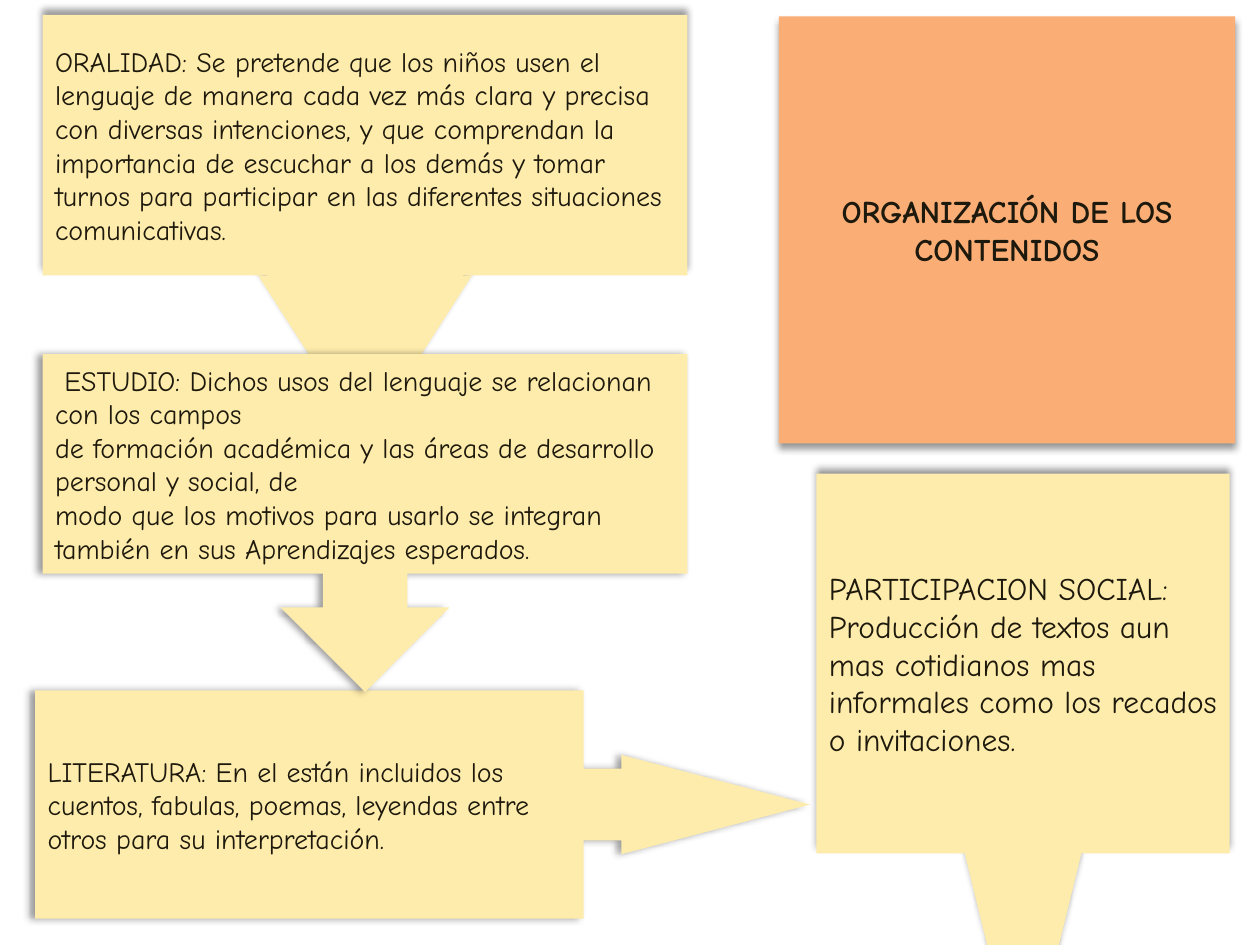
import dataclasses

import lxml.etree
import pptx
import pptx.dml.color
import pptx.enum.shapes
import pptx.enum.text
import pptx.oxml.ns
import pptx.util

SHAPES = pptx.enum.shapes.MSO_SHAPE
ALIGN = pptx.enum.text.PP_ALIGN
DOWN, LEFT, UP = 90, 180, 270  # shadow directions in degrees


@dataclasses.dataclass(frozen=True)
class Theme:
    font: str = "Comic Neue"
    ink: str = "1E190D"
    topic: str = "FAAE76"
    callout: str = "FEECAC"
    shadow: str = "000000"
    shadow_opacity: int = 40
    shadow_blur: int = 4
    shadow_distance: int = 3
    large: int = 18
    body: int = 16


def add_element(parent, tag, **attributes):
    element = lxml.etree.SubElement(parent, pptx.oxml.ns.qn(tag))
    for name, value in attributes.items():
        element.set(name, str(value))
    return element


def write_text(shape, text, *, font, size, color, bold=False, align=ALIGN.LEFT):
    """Fill the shape with one paragraph per line of text."""
    frame = shape.text_frame
    frame.word_wrap = True
    frame.auto_size = pptx.enum.text.MSO_AUTO_SIZE.NONE
    frame.vertical_anchor = pptx.enum.text.MSO_ANCHOR.MIDDLE
    frame.text = text
    for paragraph in frame.paragraphs:
        paragraph.alignment = align
        for run in paragraph.runs:
            run.font.name = font
            run.font.size = pptx.util.Pt(size)
            run.font.bold = bold
            run.font.color.rgb = pptx.dml.color.RGBColor.from_string(color)


class SlideBuilder:
    def __init__(self, slide, theme):
        self.slide = slide
        self.theme = theme

    def paint(self, shape, color, shadow_direction):
        theme = self.theme
        shape.fill.solid()
        shape.fill.fore_color.rgb = pptx.dml.color.RGBColor.from_string(color)
        shape.line.fill.background()
        shape.shadow.inherit = False
        effects = shape.element.spPr.find(pptx.oxml.ns.qn("a:effectLst"))
        shadow = add_element(
            effects, "a:outerShdw",
            blurRad=pptx.util.Pt(theme.shadow_blur),
            dist=pptx.util.Pt(theme.shadow_distance),
            dir=shadow_direction * 60000, rotWithShape=0)
        tint = add_element(shadow, "a:srgbClr", val=theme.shadow)
        add_element(tint, "a:alpha", val=theme.shadow_opacity * 1000)

    def title_circle(self, text, left, top, width, height):
        """Turn the title placeholder into the round topic of the map."""
        title = self.slide.shapes.title
        title.left, title.top = pptx.util.Cm(left), pptx.util.Cm(top)
        title.width, title.height = pptx.util.Cm(width), pptx.util.Cm(height)
        outline = add_element(title.element.spPr, "a:prstGeom", prst="ellipse")
        add_element(outline, "a:avLst")
        self.paint(title, self.theme.topic, DOWN)
        write_text(title, text, font=self.theme.font, size=self.theme.large,
                   color=self.theme.ink, bold=True, align=ALIGN.CENTER)

    def callout(self, kind, text, box, shadow_direction, size, adjustments=()):
        shape = self.slide.shapes.add_shape(kind, *map(pptx.util.Cm, box))
        for index, value in enumerate(adjustments):
            shape.adjustments[index] = value
        self.paint(shape, self.theme.callout, shadow_direction)
        write_text(shape, text, font=self.theme.font, size=size,
                   color=self.theme.ink)


def main():
    presentation = pptx.Presentation()
    presentation.slide_width = pptx.util.Cm(25.4)
    presentation.slide_height = pptx.util.Cm(19.05)
    theme = Theme()
    slide = presentation.slides.add_slide(presentation.slide_layouts[5])
    builder = SlideBuilder(slide, theme)

    builder.title_circle("ORGANIZACIÓN DE LOS CONTENIDOS", 15.7, 0.33, 9.2, 8.61)
    builder.callout(
        SHAPES.DOWN_ARROW_CALLOUT,
        "ORALIDAD: Se pretende que los niños usen el lenguaje de manera cada vez "
        "más clara y precisa con diversas intenciones, y que comprendan la "
        "importancia de escuchar a los demás y tomar turnos para participar en "
        "las diferentes situaciones comunicativas.",
        (0.86, 0.3, 13, 8.61), UP, theme.body, (0.458, 0.25, 0.389, 0.61))
    builder.callout(
        SHAPES.RIGHT_ARROW_CALLOUT,
        "LITERATURA: En el están incluidos los cuentos, fabulas, poemas, "
        "leyendas entre otros para su interpretación.",
        (0.71, 13.92, 15.62, 4.6), LEFT, theme.body, (0.314, 0.218, 0.827, 0.708))
    builder.callout(
        SHAPES.DOWN_ARROW_CALLOUT,
        "PARTICIPACION SOCIAL: Producción de textos aun mas cotidianos mas "
        "informales como los recados o invitaciones.",
        (16.46, 9.55, 8.33, 12.45), UP, theme.large, (0.402, 0.14, 0.571, 0.615))
    builder.callout(
        SHAPES.DOWN_ARROW_CALLOUT,
        " ESTUDIO: Dichos usos del lenguaje se relacionan con los campos\n"
        "de formación académica y las áreas de desarrollo personal y social, de\n"
        "modo que los motivos para usarlo se integran también en sus "
        "Aprendizajes esperados.",
        (0.86, 7.14, 13, 6.81), LEFT, theme.body)

    presentation.save("out.pptx")


if __name__ == "__main__":
    main()
